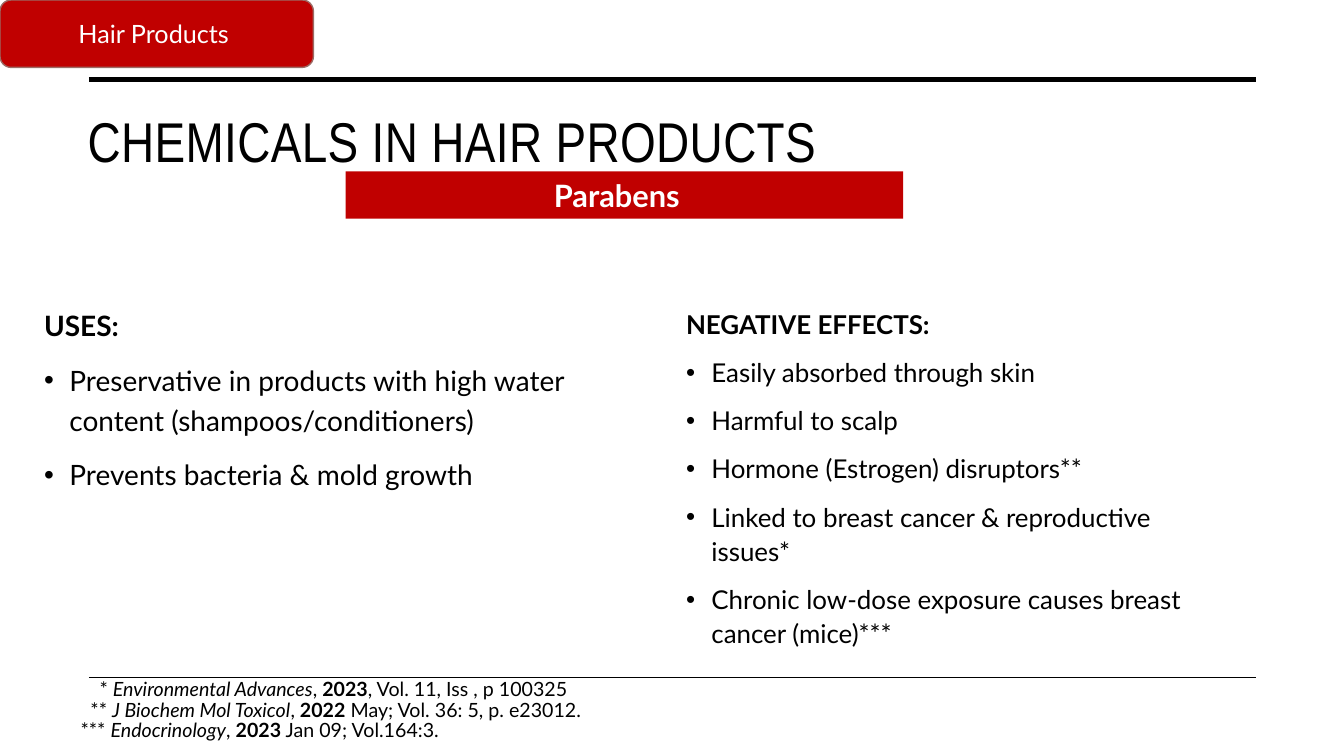
from lxml import etree
from pptx import Presentation
from pptx.dml.color import RGBColor
from pptx.enum.shapes import MSO_CONNECTOR, MSO_SHAPE
from pptx.enum.text import MSO_ANCHOR, PP_ALIGN
from pptx.oxml.ns import qn
from pptx.util import Cm, Pt

STRAIGHT = MSO_CONNECTOR.STRAIGHT
RECTANGLE, ROUNDED = MSO_SHAPE.RECTANGLE, MSO_SHAPE.ROUNDED_RECTANGLE
TOP, MIDDLE = MSO_ANCHOR.TOP, MSO_ANCHOR.MIDDLE
CENTER = PP_ALIGN.CENTER

BLACK, WHITE, RED, RED_EDGE = "000000", "FFFFFF", "C00000", "9C6B65"
TITLE_FONT, BODY_FONT = "Arial Narrow", "Lato"
BULLET_INDENT = Cm(0.64)

USES = [
    "Preservative in products with high water content (shampoos/conditioners)",
    "Prevents bacteria & mold growth",
]
EFFECTS = [
    "Easily absorbed through skin",
    "Harmful to scalp",
    "Hormone (Estrogen) disruptors**",
    "Linked to breast cancer & reproductive issues*",
    "Chronic low-dose exposure causes breast cancer (mice)***",
]
# Left edge, width, mark, journal, year, rest
CITATIONS = [
    (2.26, 23.55, "* ", "Environmental Advances", "2023", ", Vol. 11, Iss , p 100325"),
    (2.03, 15.52, "** ", "J Biochem Mol Toxicol", "2022", " May; Vol. 36: 5, p. e23012."),
    (1.78, 15.57, "*** ", "Endocrinology", "2023", " Jan 09; Vol.164:3."),
]


def paint(color_format, value):
    color_format.rgb = RGBColor.from_string(value)


def style(font, size, color=BLACK, bold=False, italic=False, name=BODY_FONT):
    font.name, font.size = name, Pt(size)
    font.bold, font.italic = bold, italic
    paint(font.color, color)


def add_rule(page, y, weight):
    rule = page.shapes.add_connector(STRAIGHT, Cm(2.24), Cm(y), Cm(31.65), Cm(y))
    rule.line.width = Pt(weight)
    paint(rule.line.color, BLACK)
    etree.SubElement(rule._element.spPr, qn("a:effectLst"))


def add_box(page, left, top, width, height):
    box = page.shapes.add_textbox(Cm(left), Cm(top), Cm(width), Cm(height))
    box.text_frame.word_wrap = True
    return box.text_frame


def add_title(page, text):
    para = add_box(page, 1.96, 2.57, 29.69, 3.81).paragraphs[0]
    para.text = text
    span = para.runs[0]
    style(span.font, 40, name=TITLE_FONT)
    span.font._element.set("spc", "30")


def add_bullet(para):
    props = para._p.get_or_add_pPr()
    props.set("marL", str(BULLET_INDENT))
    props.set("indent", str(-BULLET_INDENT))
    etree.SubElement(props, qn("a:buFont")).set("typeface", "Arial")
    etree.SubElement(props, qn("a:buChar")).set("char", "•")


def add_list(page, place, heading, items, size, spacing):
    frame = add_box(page, *place)
    for index, text in enumerate([heading] + items):
        para = frame.add_paragraph() if index else frame.paragraphs[0]
        para.text = text
        para.line_spacing = spacing
        if index:
            para.space_before = Pt(10)
            add_bullet(para)
        style(para.runs[0].font, size, bold=index == 0)


def add_label(page, kind, place, text, size, bold, anchor, right_inset):
    label = page.shapes.add_shape(kind, *[Cm(length) for length in place])
    label.shadow.inherit = False
    label.fill.solid()
    paint(label.fill.fore_color, RED)
    label.line.fill.background()
    frame = label.text_frame
    frame.word_wrap = True
    frame.vertical_anchor = anchor
    frame.margin_right = Cm(right_inset)
    para = frame.paragraphs[0]
    para.text = text
    para.alignment = CENTER
    style(para.runs[0].font, size, WHITE, bold)
    return label


def add_citation(page, top, left, width, mark, journal, year, rest):
    para = add_box(page, left, top, width, 0.86).paragraphs[0]
    for text in (mark, journal, ", ", year, rest):
        span = para.add_run()
        span.text = text
        style(span.font, 14, bold=text == year, italic=text == journal)


def main():
    deck = Presentation()
    deck.slide_width, deck.slide_height = Cm(33.87), Cm(19.05)
    page = deck.slides.add_slide(deck.slide_layouts[6])

    # Frame lines and title
    add_rule(page, 2.01, 3.5)
    add_rule(page, 17.07, 1)
    add_title(page, "CHEMICALS IN HAIR PRODUCTS")

    # Two columns
    add_list(page, (0.86, 7.49, 14.15, 9.38), "USES:", USES, 20, 1.2)
    add_list(page, (17.04, 7.57, 14.3, 9), "NEGATIVE EFFECTS:", EFFECTS, 18.5, 1.1)

    # Section tag and topic banner
    tag = add_label(page, ROUNDED, (0, 0, 7.9, 1.7), "Hair Products",
                    18, False, MIDDLE, 0.4)
    tag.line.width = Pt(1)
    paint(tag.line.color, RED_EDGE)
    add_label(page, RECTANGLE, (8.71, 4.32, 14.05, 1.19), "Parabens",
              22, True, TOP, 0.63)

    # Citations
    for index, citation in enumerate(CITATIONS):
        add_citation(page, 16.94 + 0.51 * index, *citation)

    deck.save("out.pptx")


if __name__ == "__main__":
    main()
